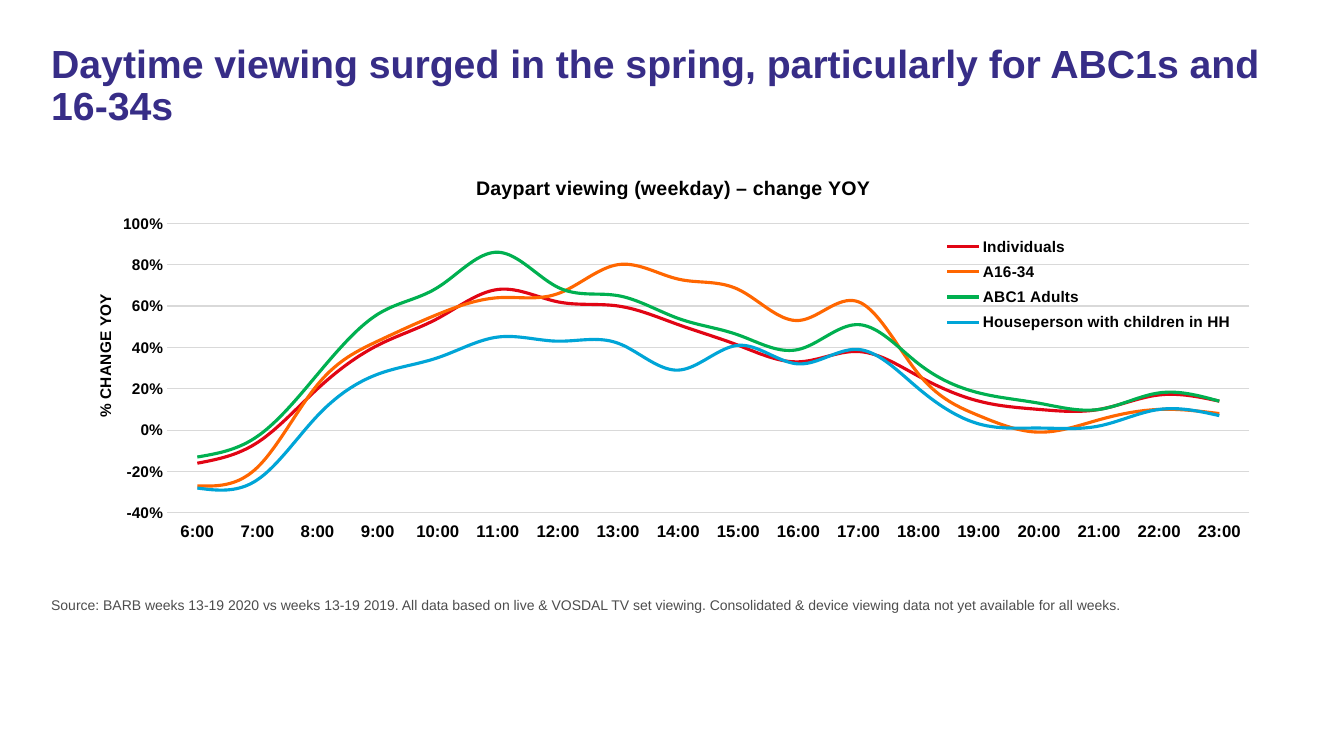
"""Build a slide with a line chart of year-on-year change in daypart viewing."""
from pptx import Presentation
from pptx.chart.data import CategoryChartData
from pptx.dml.color import RGBColor
from pptx.enum.chart import XL_CHART_TYPE, XL_LEGEND_POSITION, XL_TICK_LABEL_POSITION, XL_TICK_MARK
from pptx.oxml import parse_xml
from pptx.oxml.ns import nsdecls
from pptx.util import Inches, Pt

LINE_CHART = XL_CHART_TYPE.LINE
LEGEND_RIGHT = XL_LEGEND_POSITION.RIGHT
LABELS_LOW = XL_TICK_LABEL_POSITION.LOW
NO_TICK = XL_TICK_MARK.NONE
INDIGO = RGBColor(0x37, 0x2D, 0x87)
DARK_GREY = RGBColor(0x4D, 0x4D, 0x4D)
LIGHT_GREY = RGBColor(0xD9, 0xD9, 0xD9)
BLACK = RGBColor(0x00, 0x00, 0x00)
RED = RGBColor(0xE1, 0x05, 0x14)
ORANGE = RGBColor(0xFF, 0x66, 0x00)
GREEN = RGBColor(0x00, 0xB0, 0x50)
BLUE = RGBColor(0x00, 0xA5, 0xD7)

AUDIENCES = [
    ("Individuals", RED,
     [-0.16, -0.06, 0.2, 0.41, 0.54, 0.68, 0.62, 0.6, 0.51,
      0.41, 0.33, 0.38, 0.26, 0.14, 0.1, 0.1, 0.17, 0.14]),
    ("A16-34", ORANGE,
     [-0.27, -0.18, 0.22, 0.43, 0.56, 0.64, 0.66, 0.8, 0.73,
      0.68, 0.53, 0.62, 0.27, 0.07, -0.01, 0.05, 0.1, 0.08]),
    ("ABC1 Adults", GREEN,
     [-0.13, -0.03, 0.27, 0.56, 0.69, 0.86, 0.69, 0.65, 0.54,
      0.46, 0.39, 0.51, 0.32, 0.18, 0.13, 0.1, 0.18, 0.14]),
    ("Houseperson with children in HH", BLUE,
     [-0.28, -0.24, 0.07, 0.27, 0.35, 0.45, 0.43, 0.42, 0.29,
      0.41, 0.32, 0.39, 0.2, 0.03, 0.01, 0.02, 0.1, 0.07]),
]


def style_font(font, size, color, bold):
    for attribute, value in {"name": "Arial", "size": Pt(size), "bold": bold}.items():
        setattr(font, attribute, value)
    font.color.rgb = color


def place(successor, target, **fractions):
    parent = successor.getparent()
    for existing in parent.xpath("c:layout"):
        parent.remove(existing)
    modes = "".join(f'<c:{side}Mode val="edge"/>' for side in "xy")
    sizes = "".join(f'<c:{side} val="{value}"/>' for side, value in fractions.items())
    successor.addprevious(parse_xml(
        f'<c:layout {nsdecls("c")}><c:manualLayout>{target}{modes}{sizes}'
        "</c:manualLayout></c:layout>"))


presentation = Presentation()
presentation.slide_width = Inches(13.33)
presentation.slide_height = Inches(7.5)
slide = presentation.slides.add_slide(presentation.slide_layouts[6])

for text, top, height, size, color, bold, spacing in [
    ("Daytime viewing surged in the spring, particularly for ABC1s and 16-34s",
     0.39, 1.12, 28, INDIGO, True, 0.9),
    ("Source: BARB weeks 13-19 2020 vs weeks 13-19 2019. All data based on live & VOSDAL TV set "
     "viewing. Consolidated & device viewing data not yet available for all weeks.",
     5.87, 0.33, 10, DARK_GREY, False, 1.0),
]:
    frame = slide.shapes.add_textbox(Inches(0.41), Inches(top), Inches(12.4), Inches(height)).text_frame
    frame.word_wrap = True
    paragraph = frame.paragraphs[0]
    paragraph.text = text
    paragraph.line_spacing = spacing
    style_font(paragraph.font, size, color, bold)

viewing = CategoryChartData(number_format="0%")
viewing.categories = [f"{hour}:00" for hour in range(6, 24)]
for audience, color, changes in AUDIENCES:
    viewing.add_series(audience, changes)
chart = slide.shapes.add_chart(
    LINE_CHART, Inches(0.61), Inches(1.46), Inches(12.06), Inches(4.13), viewing).chart
style_font(chart.font, 10, BLACK, False)

plot = chart.plots[0]
plot.vary_by_categories = False
for line, (audience, color, changes) in zip(plot.series, AUDIENCES):
    line.smooth = True
    line.format.line.color.rgb = color
    line.format.line.width = Pt(2.25)

hours, change = chart.category_axis, chart.value_axis
for axis, size in [(hours, 12), (change, 11)]:
    axis.major_tick_mark = NO_TICK
    axis.minor_tick_mark = NO_TICK
    style_font(axis.tick_labels.font, size, BLACK, True)
hours.tick_label_position = LABELS_LOW
for attribute, value in {"minimum_scale": -0.4, "maximum_scale": 1, "major_unit": 0.2}.items():
    setattr(change, attribute, value)
change.tick_labels.number_format = "0%"
change.tick_labels.number_format_is_linked = False
change.format.line.fill.background()
for rule in [hours.format.line, change.major_gridlines.format.line]:
    rule.color.rgb = LIGHT_GREY
    rule.width = Pt(0.75)

chart.has_title = True
for heading, text, size in [
    (chart.chart_title, "Daypart viewing (weekday) – change YOY", 14),
    (change.axis_title, "% CHANGE YOY", 11),
]:
    paragraph = heading.text_frame.paragraphs[0]
    run = paragraph.add_run()
    run.text = text
    style_font(run.font, size, BLACK, True)

chart.has_legend = True
chart.legend.position = LEGEND_RIGHT
chart.legend.include_in_layout = False
style_font(chart.legend.font, 11, BLACK, True)

chart_root = plot._element.getroottree().getroot()
chart_root.xpath(".//c:valAx/c:title//a:bodyPr")[0].set("rot", "-5400000")
place(chart_root.xpath(".//c:lineChart")[0], '<c:layoutTarget val="inner"/>',
      x=0.087, y=0.183, w=0.89, h=0.696)
place(chart_root.xpath("c:chart/c:title/c:overlay")[0], "", x=0.338, y=0.06)
place(chart_root.xpath(".//c:valAx/c:title/c:overlay")[0], "", x=0.025, y=0.345)
place(chart_root.xpath(".//c:legend/c:overlay")[0], "", x=0.72, y=0.2, w=0.25, h=0.26)

presentation.save("out.pptx")
